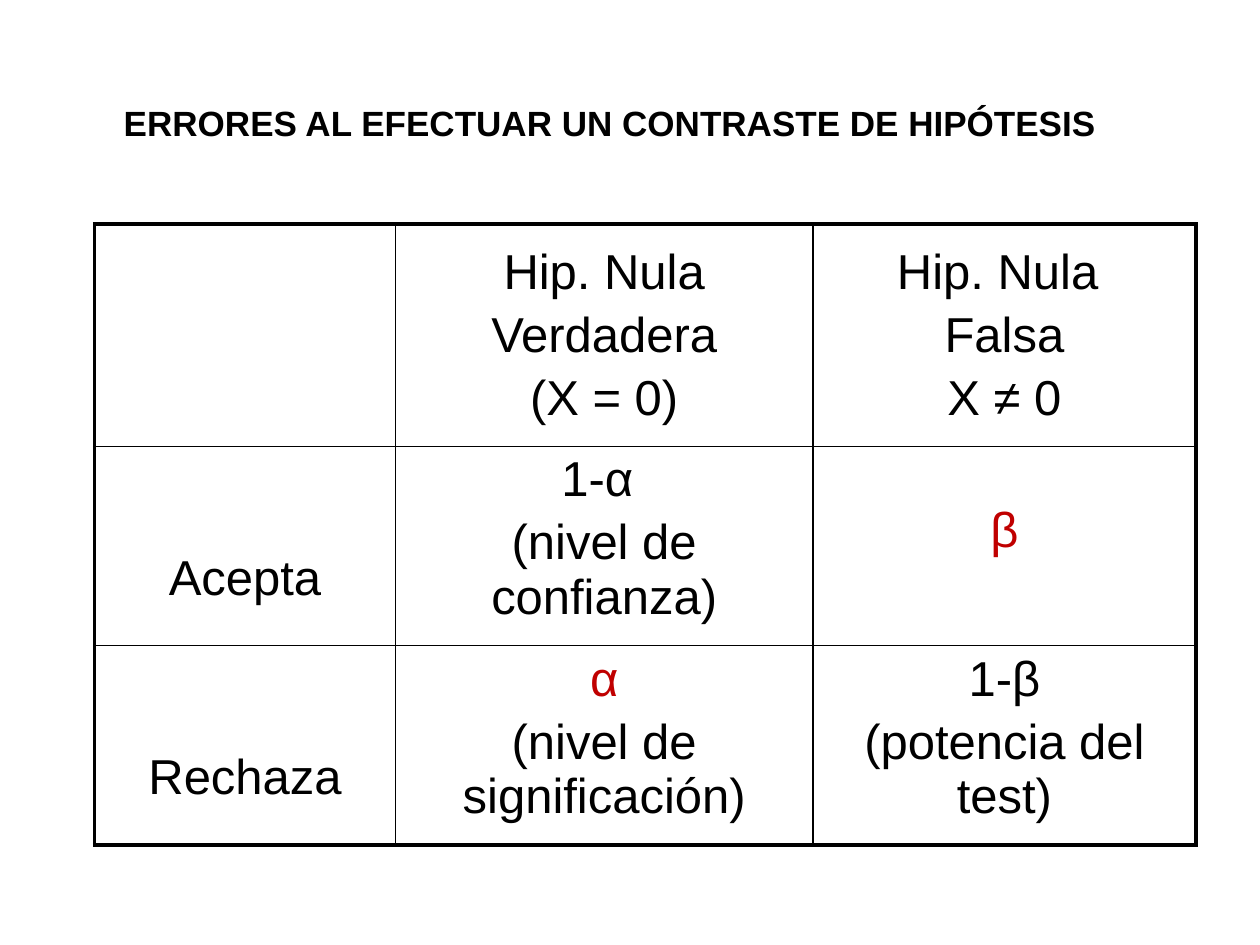
import pptx
import pptx.util
import pptx.dml.color
import pptx.enum.text
import pptx.oxml.ns
from lxml import etree

Pt = pptx.util.Pt
BLACK = pptx.dml.color.RGBColor(0x00, 0x00, 0x00)
RED = pptx.dml.color.RGBColor(0xC0, 0x00, 0x00)
MID = pptx.enum.text.MSO_ANCHOR.MIDDLE
TOP = pptx.enum.text.MSO_ANCHOR.TOP
CENTER = pptx.enum.text.PP_ALIGN.CENTER

TITLE = "ERRORES AL EFECTUAR UN CONTRASTE DE HIPÓTESIS"
CELLS = [
    [[], ["Hip. Nula", "Verdadera", "(X = 0)"], ["Hip. Nula ", "Falsa", "X ≠ 0"]],
    [["Acepta"], ["1-α ", "(nivel de confianza)"], ["β"]],
    [["Rechaza"], ["α", "(nivel de significación)"], ["1-β", "(potencia del test)"]],
]
ERRORS = {"α", "β"}
WIDTHS = [172, 238.5, 219]
HEIGHTS = [127, 114, 114]
LEFT, UPPER = 54, 128
DROPS = {(1, 0): 40.5, (2, 0): 40.5, (1, 2): 32.5}  # top margins
THICK, THIN = 2.25, 1


def write(para, text, size, color, bold=False):
    para.alignment = CENTER
    run = para.add_run()
    run.text = text
    font = run.font
    font.name, font.size, font.bold = "Arial", Pt(size), bold
    font.color.rgb = color


def edge(cell, side, width):
    """Draw one border of a cell."""
    qn = pptx.oxml.ns.qn
    props = cell._tc.get_or_add_tcPr()
    line = etree.SubElement(props, qn("a:ln" + side), w=str(Pt(width)))
    fill = etree.SubElement(line, qn("a:solidFill"))
    etree.SubElement(fill, qn("a:srgbClr"), val=str(BLACK))


def add_title(slide):
    title = slide.shapes.title
    title.left, title.top = Pt(42.5), Pt(54)
    title.width, title.height = Pt(612), Pt(31.5)
    title.text_frame.vertical_anchor = MID
    write(title.text_frame.paragraphs[0], TITLE, 20, BLACK, True)


def add_grid(slide):
    rows, cols = len(HEIGHTS), len(WIDTHS)
    grid = slide.shapes.add_table(
        rows, cols, Pt(LEFT), Pt(UPPER), Pt(sum(WIDTHS)), Pt(sum(HEIGHTS))
    ).table
    grid.first_row = grid.horz_banding = False
    for col, width in zip(grid.columns, WIDTHS):
        col.width = Pt(width)
    for row, height in zip(grid.rows, HEIGHTS):
        row.height = Pt(height)
    for r, line in enumerate(CELLS):
        for c, texts in enumerate(line):
            cell = grid.cell(r, c)
            outer = {"L": c == 0, "R": c == cols - 1, "T": r == 0, "B": r == rows - 1}
            for side, rim in outer.items():
                edge(cell, side, THICK if rim else THIN)
            cell.fill.background()
            cell.vertical_anchor = MID if r == 0 or c == 0 else TOP
            cell.margin_top = Pt(DROPS.get((r, c), 3.6))
            frame = cell.text_frame
            for i, text in enumerate(texts):
                para = frame.add_paragraph() if i else frame.paragraphs[0]
                para.space_before = Pt(4.7 if i else 0)
                write(para, text, 28, RED if text in ERRORS else BLACK)


def main():
    deck = pptx.Presentation()
    deck.slide_width, deck.slide_height = Pt(720), Pt(540)
    slide = deck.slides.add_slide(deck.slide_layouts[5])
    add_title(slide)
    add_grid(slide)
    deck.save("out.pptx")


if __name__ == "__main__":
    main()
